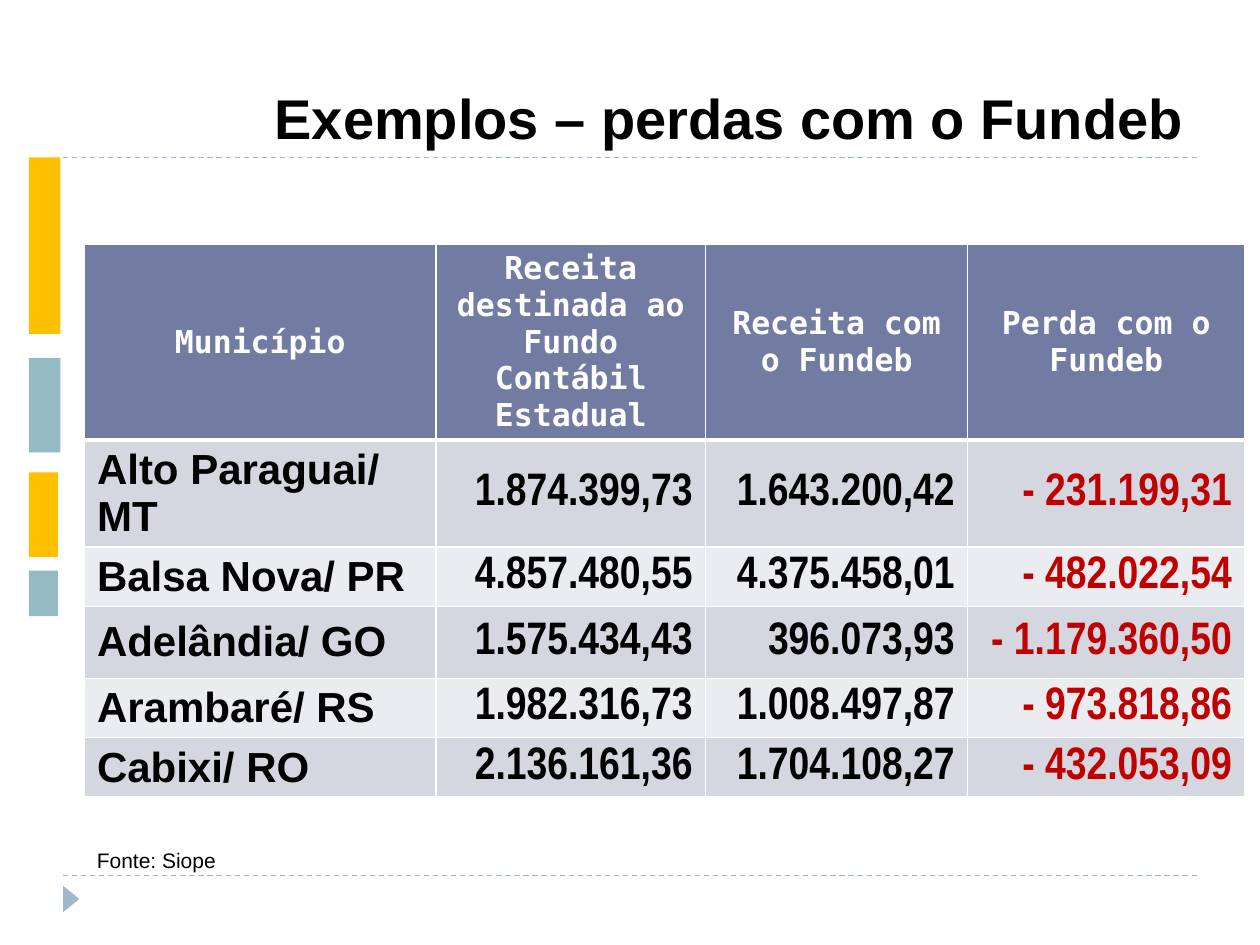
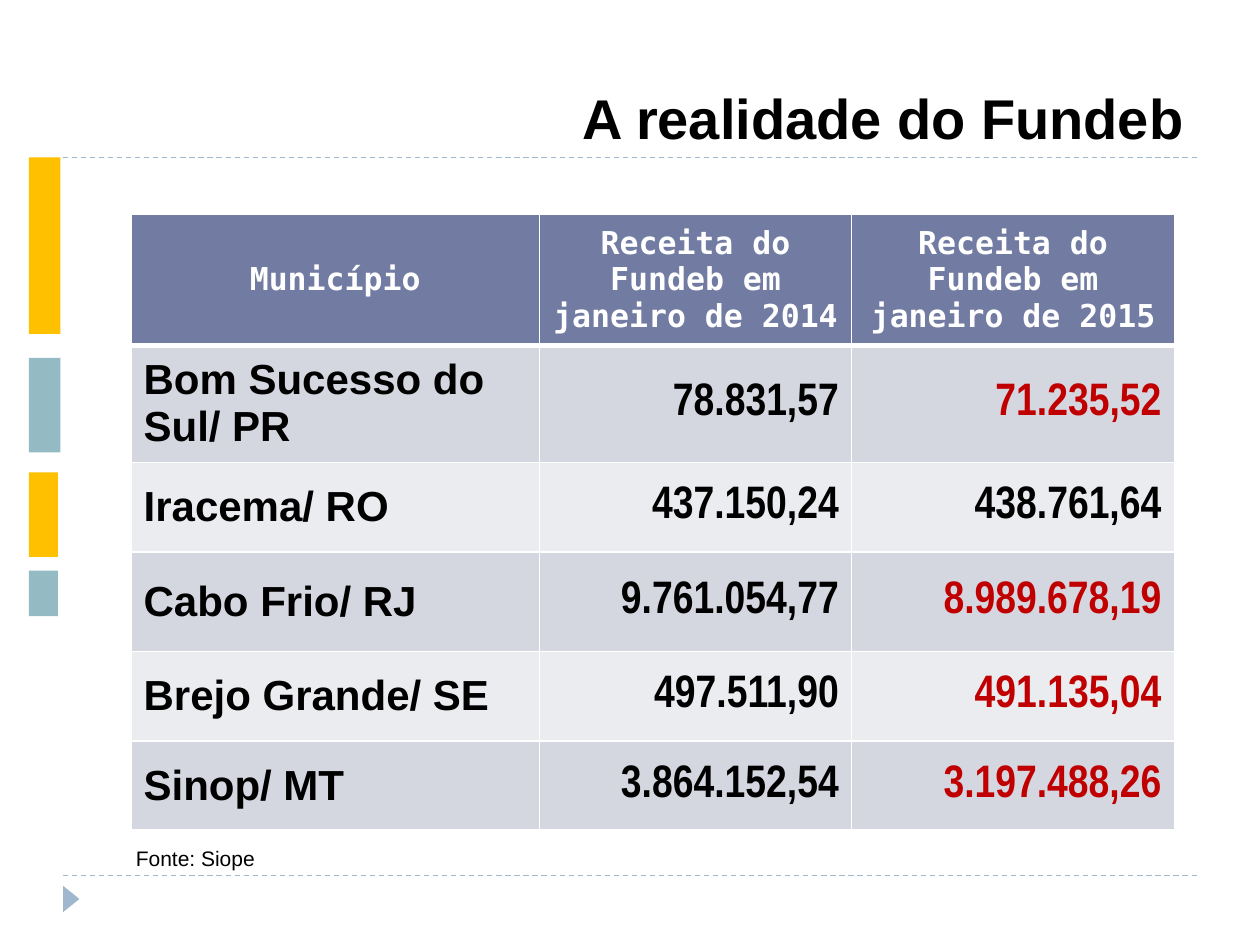
from lxml.etree import SubElement
from pptx import Presentation
from pptx.dml.color import RGBColor
from pptx.enum.dml import MSO_LINE
from pptx.enum.shapes import MSO_CONNECTOR, MSO_SHAPE
from pptx.enum.text import MSO_ANCHOR, MSO_AUTO_SIZE, PP_ALIGN
from pptx.oxml.ns import qn
from pptx.util import Inches, Pt

BLACK = RGBColor(0x00, 0x00, 0x00)
WHITE = RGBColor(0xFF, 0xFF, 0xFF)
LOSS_RED = RGBColor(0xC0, 0x00, 0x00)
AMBER = RGBColor(0xFF, 0xC0, 0x00)
TEAL = RGBColor(0x94, 0xBA, 0xC3)
RULE_BLUE = RGBColor(0x9F, 0xB8, 0xCD)
HEADER_BLUE = RGBColor(0x72, 0x7C, 0xA3)
ROW_TINTS = (RGBColor(0xD5, 0xD7, 0xE0), RGBColor(0xEB, 0xEC, 0xF0))

SLIDE_WIDTH, SLIDE_HEIGHT = Inches(10), Inches(7.5)
GRID_COLUMNS, GRID_ROWS = 100, 75
TITLE_RULE, FOOTER_RULE = 12.5, 69.5
MARGIN_LEFT, MARGIN_RIGHT = 5, 95
SIDE_BANDS = (
    (12.5, 2.5, 14, AMBER),
    (28.4, 2.5, 7.5, TEAL),
    (37.5, 2.3, 6.7, AMBER),
    (45.3, 2.3, 3.6, TEAL),
)

LOSSES = (
    ("Município", "Receita destinada ao Fundo Contábil Estadual",
     "Receita com o Fundeb", "Perda com o Fundeb"),
    ("Alto Paraguai/ MT", "1.874.399,73", "1.643.200,42", "- 231.199,31"),
    ("Balsa Nova/ PR", "4.857.480,55", "4.375.458,01", "- 482.022,54"),
    ("Adelândia/ GO", "1.575.434,43", "396.073,93", "- 1.179.360,50"),
    ("Arambaré/ RS", "1.982.316,73", "1.008.497,87", "- 973.818,86"),
    ("Cabixi/ RO", "2.136.161,36", "1.704.108,27", "- 432.053,09"),
)
REVENUES = (
    ("Município", "Receita do Fundeb em janeiro de 2014",
     "Receita do Fundeb em janeiro de 2015"),
    ("Bom Sucesso do Sul/ PR", "78.831,57", "71.235,52"),
    ("Iracema/ RO", "437.150,24", "438.761,64"),
    ("Cabo Frio/ RJ", "9.761.054,77", "8.989.678,19"),
    ("Brejo Grande/ SE", "497.511,90", "491.135,04"),
    ("Sinop/ MT", "3.864.152,54", "3.197.488,26"),
)


def across(columns):
    """Turn grid columns into a horizontal length."""
    return round(SLIDE_WIDTH * columns / GRID_COLUMNS)


def down(rows):
    """Turn grid rows into a vertical length."""
    return round(SLIDE_HEIGHT * rows / GRID_ROWS)


def box(left, top, width, height):
    """Turn a grid rectangle into slide lengths."""
    return across(left), down(top), across(width), down(height)


def amount(figure):
    """Read a Brazilian figure as a number."""
    return float(figure.replace(" ", "").replace(".", "").replace(",", "."))


def add_text(frame, text, size, font, color=BLACK, bold=False, align=PP_ALIGN.LEFT):
    """Write one formatted run into the first paragraph of a frame."""
    paragraph = frame.paragraphs[0]
    paragraph.alignment = align
    run = paragraph.add_run()
    run.text = text
    run.font.size = Pt(size)
    run.font.name = font
    run.font.bold = bold
    run.font.color.rgb = color


def add_rule(slide, row):
    """Draw a dashed line across the content width."""
    rule = slide.shapes.add_connector(
        MSO_CONNECTOR.STRAIGHT,
        across(MARGIN_LEFT), down(row), across(MARGIN_RIGHT), down(row))
    rule.line.color.rgb = RULE_BLUE
    rule.line.width = Pt(0.75)
    rule.line.dash_style = MSO_LINE.DASH
    SubElement(rule.element.spPr, qn("a:effectLst"))


def add_block(slide, kind, place, color, rotation=0):
    """Draw a plain filled shape without outline."""
    block = slide.shapes.add_shape(kind, *box(*place))
    block.shadow.inherit = False
    block.fill.solid()
    block.fill.fore_color.rgb = color
    block.line.fill.background()
    block.rotation = rotation


def add_frame(slide):
    """Draw the rules, page marker and side bands shared by all slides."""
    for row in (FOOTER_RULE, TITLE_RULE):
        add_rule(slide, row)
    add_block(slide, MSO_SHAPE.ISOSCELES_TRIANGLE, (4.6, 70.7, 2.1, 1.3), RULE_BLUE, 90)
    for top, width, height, color in SIDE_BANDS:
        add_block(slide, MSO_SHAPE.RECTANGLE, (2.3, top, width, height), color)


def set_title(slide, text):
    """Place the title above the upper rule and write it."""
    title = slide.shapes.title
    title.left, title.top, title.width, title.height = box(
        MARGIN_LEFT, 1.7, MARGIN_RIGHT - MARGIN_LEFT, 10.8)
    title.text_frame.auto_size = MSO_AUTO_SIZE.NONE
    title.text_frame.vertical_anchor = MSO_ANCHOR.BOTTOM
    add_text(title.text_frame, text, 32, "Arial", bold=True, align=PP_ALIGN.RIGHT)


def style_cell(cell, color, top_width, bottom_width):
    """Give a cell white borders, a fill and middle anchoring."""
    properties = cell._tc.get_or_add_tcPr()
    widths = {"lnL": 1, "lnR": 1, "lnT": top_width, "lnB": bottom_width}
    for side, width in widths.items():
        border = SubElement(properties, qn(f"a:{side}"), w=str(Pt(width)))
        paint = SubElement(border, qn("a:solidFill"))
        SubElement(paint, qn("a:srgbClr"), val=str(WHITE))
    cell.fill.solid()
    cell.fill.fore_color.rgb = color
    cell.vertical_anchor = MSO_ANCHOR.MIDDLE


def add_header(table, labels):
    """Write the column labels."""
    for cell, label in zip(table.rows[0].cells, labels):
        style_cell(cell, HEADER_BLUE, 1, 3)
        add_text(cell.text_frame, label, 18, "DejaVu Sans Mono", WHITE, True, PP_ALIGN.CENTER)


def add_municipality(table, index, entry):
    """Write one municipality, with a falling last figure in red."""
    cells = list(table.rows[index].cells)
    for cell in cells:
        style_cell(cell, ROW_TINTS[(index - 1) % 2], 3 if index == 1 else 1, 1)
    name, *figures = entry
    add_text(cells[0].text_frame, name, 24, "Arial", bold=True)
    falls = amount(figures[-1]) < amount(figures[-2])
    for column, figure in enumerate(figures, 1):
        color = LOSS_RED if falls and column == len(figures) else BLACK
        add_text(cells[column].text_frame, figure, 26, "Arial Narrow", color, True, PP_ALIGN.RIGHT)


def add_fund_table(slide, entries, left, top, widths, heights):
    """Add a table of municipalities and their revenues."""
    place = box(left, top, sum(widths), sum(heights))
    table = slide.shapes.add_table(len(heights), len(widths), *place).table
    for column, width in zip(table.columns, widths):
        column.width = across(width)
    for row, height in zip(table.rows, heights):
        row.height = down(height)
    add_header(table, entries[0])
    for index, entry in enumerate(entries[1:], 1):
        add_municipality(table, index, entry)


def add_source(slide, left, top):
    """Name the data source below the table."""
    source = slide.shapes.add_textbox(*box(left, top, 11.5, 3)).text_frame
    source.word_wrap = False
    source.auto_size = MSO_AUTO_SIZE.SHAPE_TO_FIT_TEXT
    add_text(source, "Fonte: Siope", 12, "Arial")


def add_fund_slide(deck, title, table_layout, source_place):
    """Add a slide with a title, a fund table and its source."""
    slide = deck.slides.add_slide(deck.slide_layouts.get_by_name("Title Only"))
    add_frame(slide)
    set_title(slide, title)
    add_fund_table(slide, *table_layout)
    add_source(slide, *source_place)


def main():
    """Build and save the presentation."""
    deck = Presentation()
    deck.slide_width, deck.slide_height = SLIDE_WIDTH, SLIDE_HEIGHT
    add_fund_slide(
        deck, "Exemplos – perdas com o Fundeb",
        (LOSSES, 6.7, 19.4, (27.9, 21.4, 20.8, 22), (15.4, 8.5, 4.7, 5.7, 4.7, 4.7)),
        (6.7, 66.8))
    add_fund_slide(
        deck, "A realidade do Fundeb",
        (REVENUES, 10.4, 17, (32.4, 24.8, 25.6), (10.4, 9.3, 7.1, 7.9, 7.1, 7.1)),
        (9.8, 66.6))
    deck.save("out.pptx")


if __name__ == "__main__":
    main()
